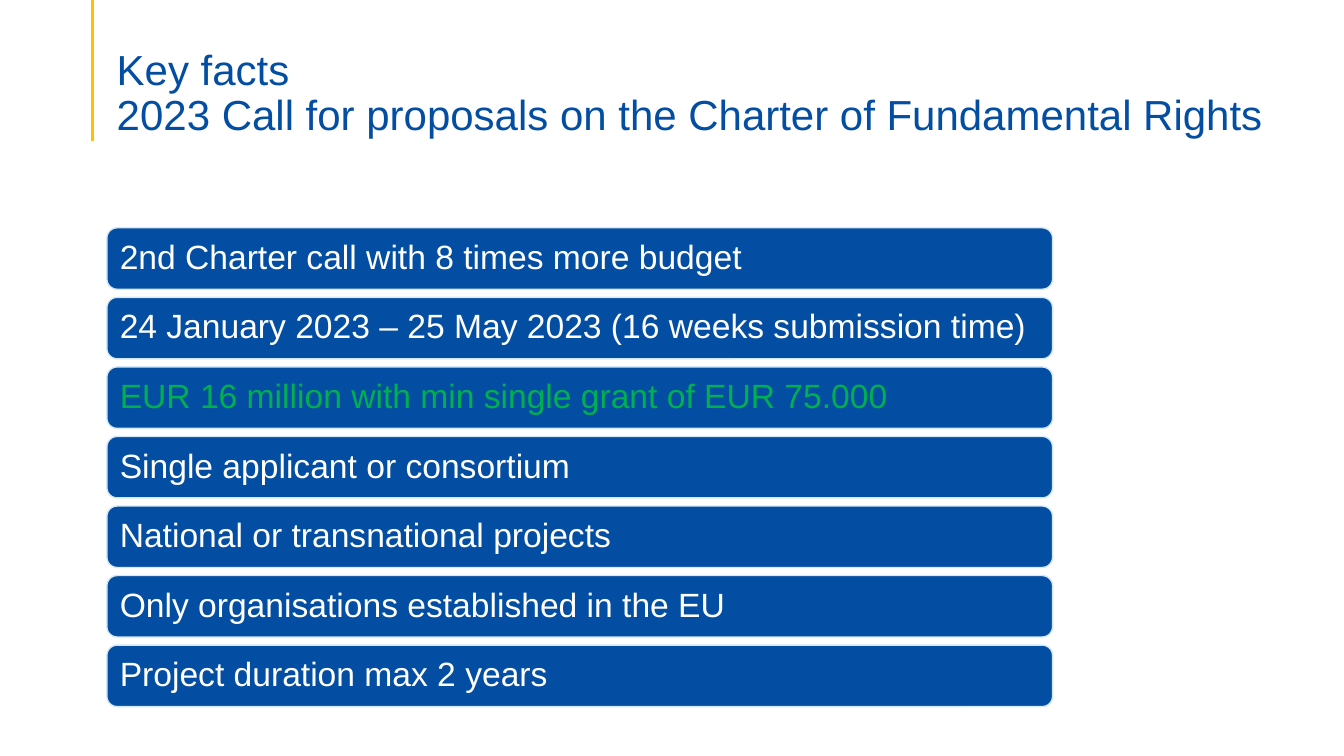
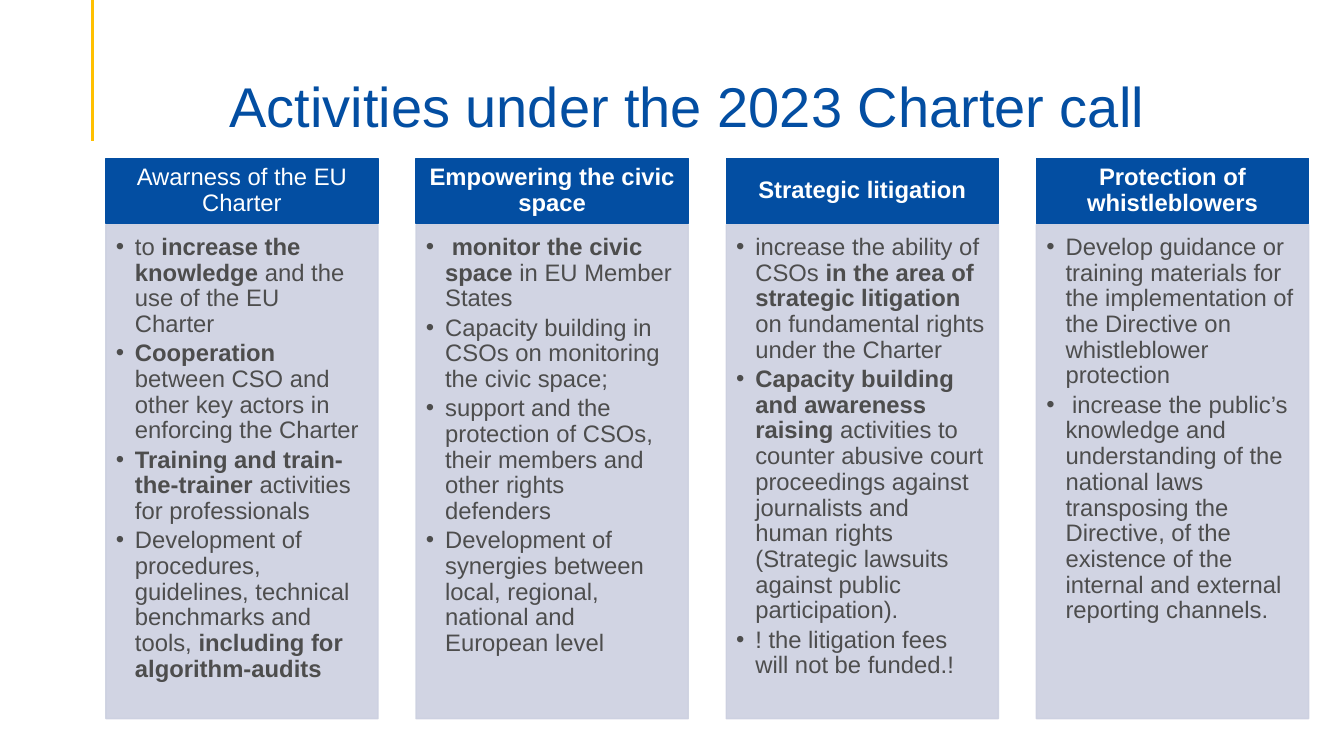
from pptx import Presentation
from pptx.dml.color import RGBColor as RGB
from pptx.enum.shapes import MSO_CONNECTOR as Conn, MSO_SHAPE as Kind
from pptx.enum.text import MSO_ANCHOR as Anchor, PP_ALIGN as Align
from pptx.oxml.ns import qn
from pptx.util import Inches, Pt
from lxml import etree

# Shared colours
BLUE = RGB(0x03, 0x4E, 0xA2)
GOLD = RGB(0xFF, 0xC0, 0x00)
PALE = RGB(0xD3, 0xE8, 0xF9)
GREEN = RGB(0x00, 0xB0, 0x50)
GREY = RGB(0x4D, 0x4D, 0x4D)
MIST = RGB(0xCC, 0xD0, 0xE0)
WHITE = RGB(0xFF, 0xFF, 0xFF)

# Content: stars enclose bold words
FACTS_TITLE = "Key facts\n2023 Call for proposals on the Charter of Fundamental Rights"
FACTS = [
    ("2nd Charter call with 8 times more budget", WHITE),
    ("24 January 2023 – 25 May 2023 (16 weeks submission time)", WHITE),
    ("EUR 16 million with min single grant of EUR 75.000", GREEN),
    ("Single applicant or consortium", WHITE),
    ("National or transnational projects", WHITE),
    ("Only organisations established in the EU", WHITE),
    ("Project duration max 2 years", WHITE),
]
WORK_TITLE = "Activities under the 2023 Charter call"
WORK = [
    ("Awarness of the EU Charter", [
        "to *increase the knowledge *and the use of the EU Charter",
        "*Cooperation* between CSO and other key actors in enforcing the Charter",
        "*Training and train-the-trainer *activities for professionals",
        "Development of procedures, guidelines, technical benchmarks and tools, "
        "*including for algorithm-audits*",
    ]),
    ("*Empowering the civic space*", [
        " *monitor the civic space *in EU Member States",
        "Capacity building in CSOs on monitoring the civic space;",
        "support and the protection of CSOs, their members and other rights defenders",
        "Development of synergies between local, regional, national and European level",
    ]),
    ("*Strategic litigation*", [
        "increase the ability of CSOs *in the area of strategic litigation *"
        "on fundamental rights under the Charter",
        "*Capacity building and awareness raising *activities to counter abusive "
        "court proceedings against journalists and human rights "
        "(Strategic lawsuits against public participation).",
        "! the litigation fees will not be funded.!",
    ]),
    ("*Protection of whistleblowers*", [
        "Develop guidance or training materials for the implementation of "
        "the Directive on whistleblower protection",
        " increase the public’s knowledge and understanding of the national laws "
        "transposing the Directive, of the existence of the internal and external "
        "reporting channels.",
    ]),
]

# Text formats
HEAD = dict(size=30, color=BLUE, anchor=Anchor.BOTTOM, pad=(0.1, 0.05, 0.1, 0))
MID = dict(HEAD, size=40, align=Align.CENTER)
FACT = dict(size=24, anchor=Anchor.MIDDLE, pad=(0.1, 0.1, 0.1, 0.1))
CAP = dict(size=17, color=WHITE, anchor=Anchor.MIDDLE, align=Align.CENTER,
           pad=(0.13, 0.08, 0.13, 0.08))
LIST = dict(size=17, color=GREY, anchor=Anchor.TOP, pad=(0.1, 0.1, 0.13, 0.15),
            after=2.5, hang=0.19)


def add_bullet(para, hang):
    props = para._p.get_or_add_pPr()
    props.set("marL", str(Inches(hang)))
    props.set("indent", str(-Inches(hang)))
    etree.SubElement(props, qn("a:buFont")).set("typeface", "Arial")
    etree.SubElement(props, qn("a:buChar")).set("char", "•")


def write(shape, lines, size, color, anchor, pad, align=Align.LEFT, after=0, hang=0):
    frame = shape.text_frame
    frame.word_wrap = True
    frame.vertical_anchor = anchor
    for side, gap in zip(("left", "top", "right", "bottom"), pad):
        setattr(frame, "margin_" + side, Inches(gap))
    for i, line in enumerate(lines):
        para = frame.add_paragraph() if i else frame.paragraphs[0]
        form = dict(alignment=align, line_spacing=0.9, space_after=Pt(after))
        for name, value in form.items():
            setattr(para, name, value)
        if hang:
            add_bullet(para, hang)
        for j, part in enumerate(line.split("*")):
            if part:
                run = para.add_run()
                run.text = part
                font = dict(name="Arial", size=Pt(size), bold=j % 2 == 1)
                for name, value in font.items():
                    setattr(run.font, name, value)
                run.font.color.rgb = color


def add_box(slide, kind, area, fill, edge, alpha=100):
    box = slide.shapes.add_shape(kind, *map(Inches, area))
    box.shadow.inherit = False
    box.fill.solid()
    box.fill.fore_color.rgb = fill
    box.line.color.rgb = edge
    box.line.width = Pt(1)
    if alpha < 100:
        for tint in box._element.spPr.iter(qn("a:srgbClr")):
            etree.SubElement(tint, qn("a:alpha")).set("val", str(alpha * 1000))
    return box


def add_page(deck, title, form, width):
    slide = deck.slides.add_slide(deck.slide_layouts[6])
    # Gold rule beside the title
    x = Inches(0.92)
    rule = slide.shapes.add_connector(Conn.STRAIGHT, x, 0, x, Inches(1.4))
    rule.line.color.rgb = GOLD
    rule.line.width = Pt(2.25)
    etree.SubElement(rule._element.spPr, qn("a:effectLst"))
    area = (1.06, 0.53, width, 0.86)
    head = slide.shapes.add_textbox(*map(Inches, area))
    write(head, title.split("\n"), **form)
    return slide


def add_facts(deck):
    slide = add_page(deck, FACTS_TITLE, HEAD, 12.17)
    top, step, high = 2.26, 0.69, 0.61
    for i, (text, color) in enumerate(FACTS):
        area = (1.06, top + i * step, 9.38, high)
        bar = add_box(slide, Kind.ROUNDED_RECTANGLE, area, BLUE, PALE)
        write(bar, [text], color=color, **FACT)


def add_work(deck):
    slide = add_page(deck, WORK_TITLE, MID, 11.5)
    left, right, wide = 1.05, 12.98, 2.7
    step = (right - left - wide) / (len(WORK) - 1)
    for i, (name, items) in enumerate(WORK):
        x = left + i * step
        body = add_box(slide, Kind.RECTANGLE, (x, 2.23, wide, 4.9), MIST, MIST, 90)
        write(body, items, **LIST)
        cap = add_box(slide, Kind.RECTANGLE, (x, 1.57, wide, 0.65), BLUE, BLUE)
        write(cap, [name], **CAP)


def main():
    deck = Presentation()
    deck.slide_width, deck.slide_height = Inches(13.33), Inches(7.5)
    add_facts(deck)
    add_work(deck)
    deck.save("out.pptx")


if __name__ == "__main__":
    main()
